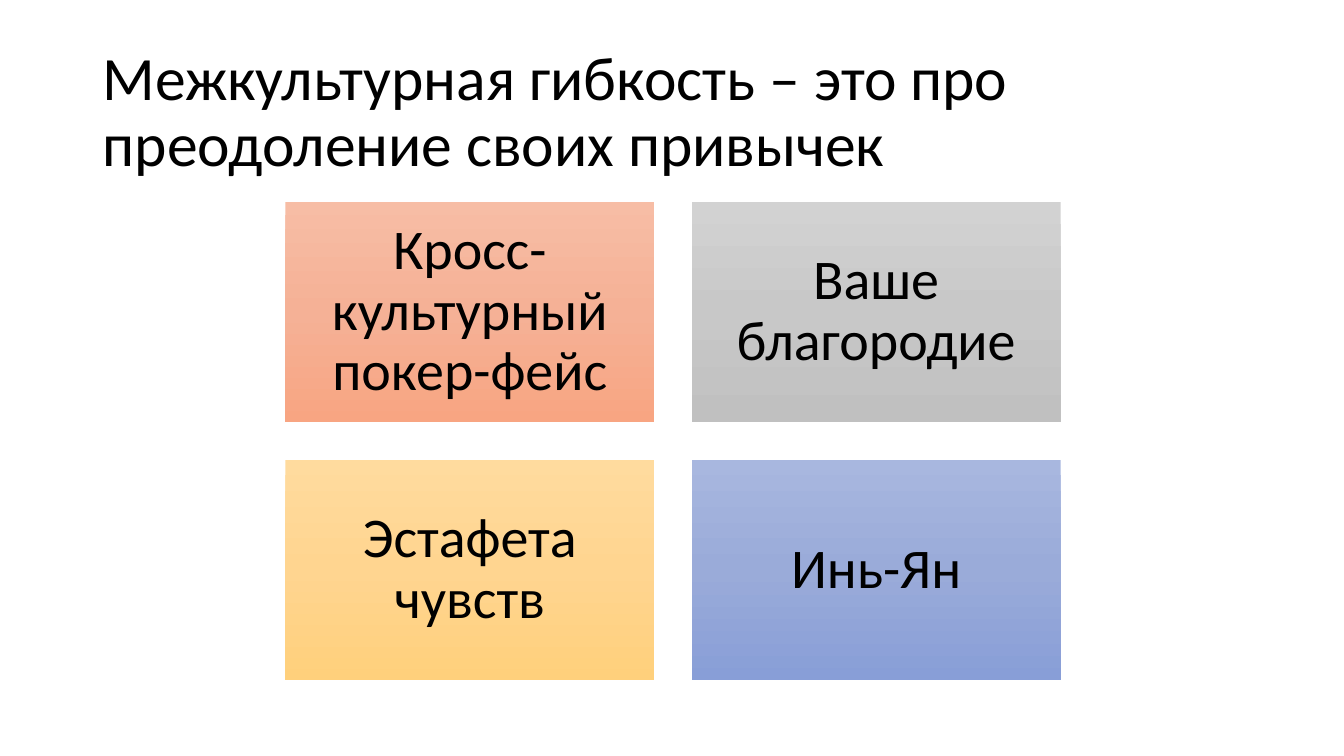
from copy import deepcopy

from pptx import Presentation
from pptx.dml.color import RGBColor
from pptx.enum.shapes import MSO_SHAPE as Shape
from pptx.enum.text import MSO_ANCHOR as Anchor, PP_ALIGN as Align
from pptx.oxml.ns import qn
from pptx.util import Inches, Pt

CARDS = [
    ("Кросс-культурный покер-фейс", ("F7BDA5", "F5B196", "F8A582")),
    ("Ваше благородие", ("D2D2D2", "C8C8C8", "C0C0C0")),
    ("Эстафета чувств", ("FFDB9E", "FFD590", "FFD07C")),
    ("Инь-Ян", ("A8B7DF", "9AABD9", "889ED7")),
]
COLUMNS = 2
GRID_LEFT, GRID_TOP = 2.83, 2
CARD_WIDTH, CARD_HEIGHT = 3.66, 2.19
GAP = 0.37


def color(value):
    return RGBColor.from_string(value)


def apply(target, values):
    for name, value in values.items():
        setattr(target, name, value)


class SlideBuilder:
    font_name = "Calibri"
    text_color = "000000"

    def __init__(self, slide):
        self.slide = slide

    def add_text(self, shape, text, size, align, margins):
        frame = shape.text_frame
        sides = ("left", "top", "right", "bottom")
        apply(frame, {"word_wrap": True, "vertical_anchor": Anchor.MIDDLE})
        apply(frame, {f"margin_{side}": Inches(margin) for side, margin in zip(sides, margins)})
        paragraph = frame.paragraphs[0]
        apply(paragraph, {"alignment": align, "line_spacing": 0.9})
        run = paragraph.add_run()
        run.text = text
        apply(run.font, {"name": self.font_name, "size": Pt(size)})
        run.font.color.rgb = color(self.text_color)

    def title(self, text, left, top, width, height):
        box = self.slide.shapes.add_textbox(*map(Inches, (left, top, width, height)))
        self.add_text(box, text, 44, Align.LEFT, (0.1, 0.05, 0.1, 0.05))

    def gradient(self, shape, shades):
        shape.fill.gradient()
        shape.fill.gradient_angle = 270
        stop_list = shape._element.spPr.find(qn("a:gradFill")).find(qn("a:gsLst"))
        stop_list.insert(1, deepcopy(stop_list[0]))
        for stop, position, shade in zip(shape.fill.gradient_stops, (0, 0.5, 1), shades):
            stop.position = position
            stop.color.rgb = color(shade)

    def card(self, text, shades, left, top):
        bounds = map(Inches, (left, top, CARD_WIDTH, CARD_HEIGHT))
        shape = self.slide.shapes.add_shape(Shape.RECTANGLE, *bounds)
        shape.shadow.inherit = False
        shape.line.fill.background()
        self.gradient(shape, shades)
        self.add_text(shape, text, 40, Align.CENTER, (0.17,) * 4)


def main():
    presentation = Presentation()
    apply(presentation, {"slide_width": Inches(13.33), "slide_height": Inches(7.5)})
    builder = SlideBuilder(presentation.slides.add_slide(presentation.slide_layouts[6]))
    builder.title("Межкультурная гибкость – это про преодоление своих привычек", 0.92, 0.4, 11.5, 1.45)
    for index, (text, shades) in enumerate(CARDS):
        row, column = divmod(index, COLUMNS)
        left = GRID_LEFT + column * (CARD_WIDTH + GAP)
        top = GRID_TOP + row * (CARD_HEIGHT + GAP)
        builder.card(text, shades, left, top)
    presentation.save("out.pptx")


if __name__ == "__main__":
    main()
